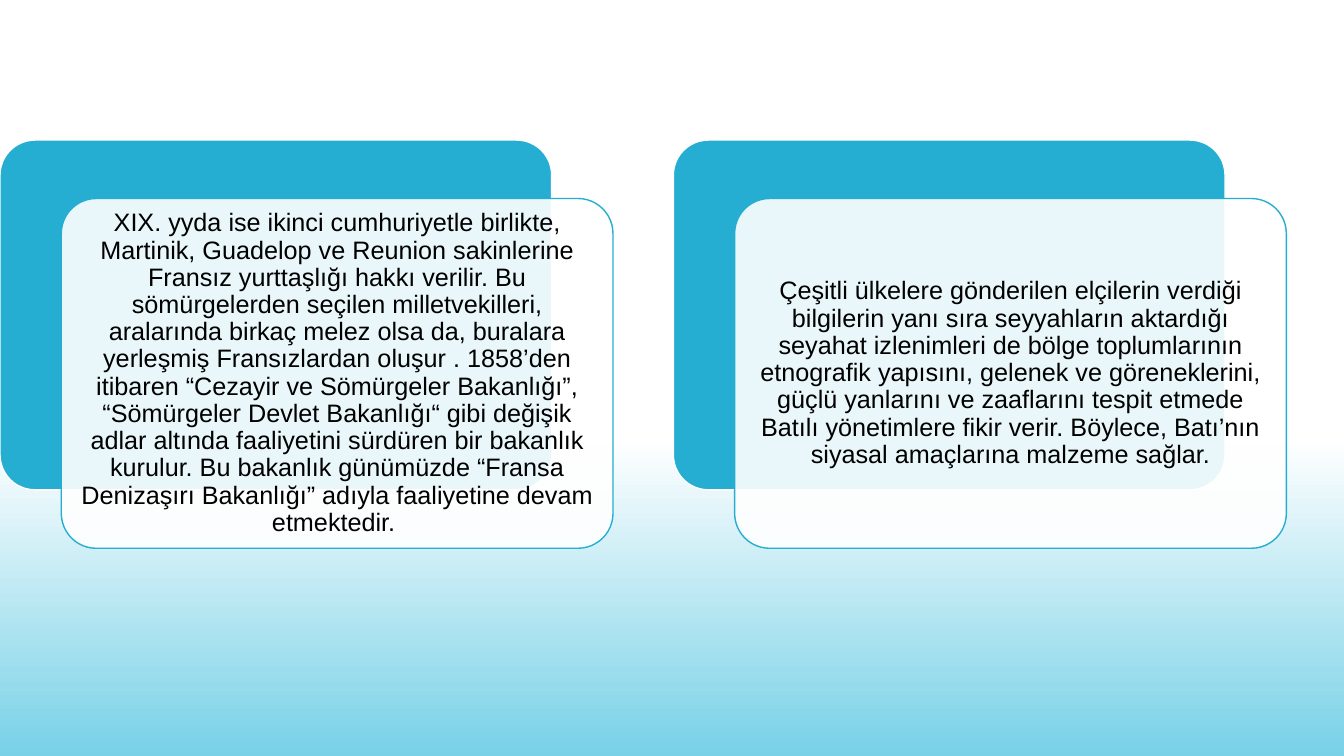
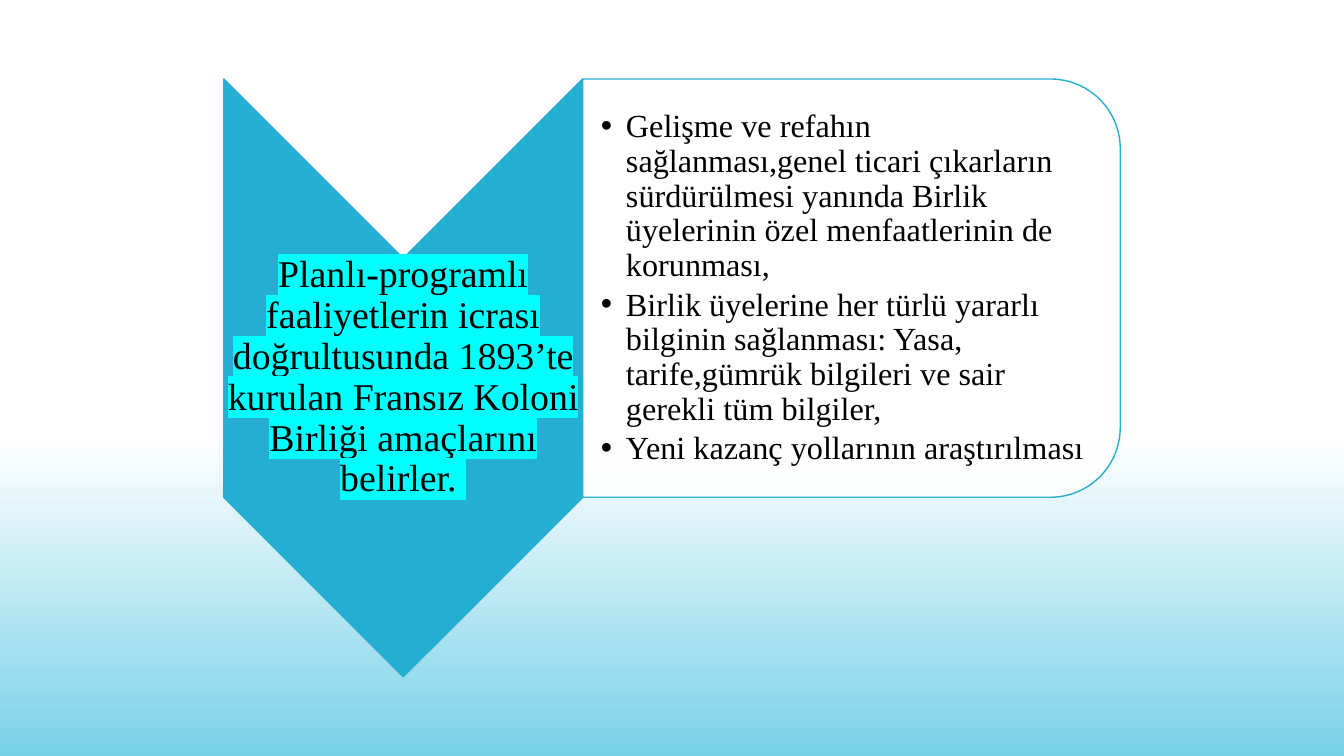
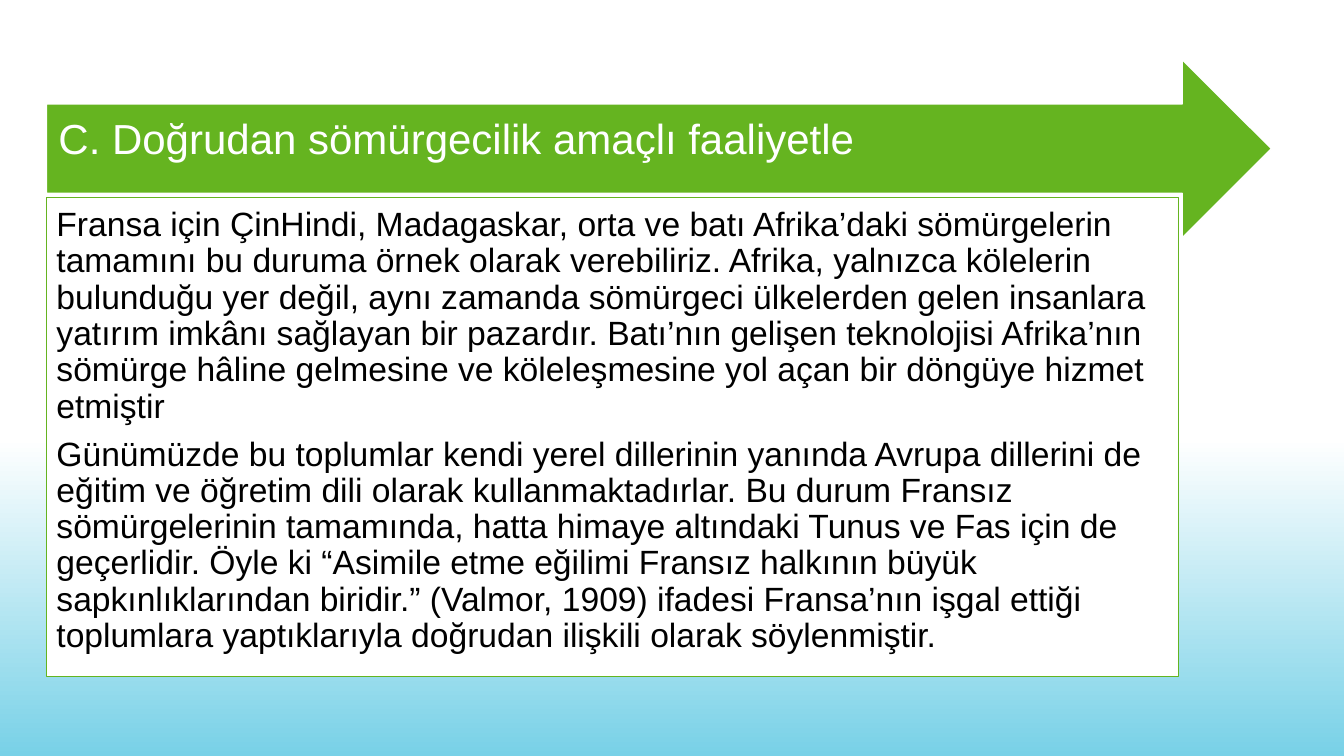
from lxml import etree
from pptx import Presentation
from pptx.dml.color import RGBColor
from pptx.enum.shapes import MSO_SHAPE
from pptx.enum.text import MSO_ANCHOR, MSO_AUTO_SIZE, PP_ALIGN
from pptx.oxml.ns import qn
from pptx.util import Inches, Pt

ROUNDED = MSO_SHAPE.ROUNDED_RECTANGLE
CHEVRON = MSO_SHAPE.CHEVRON
TWO_ROUNDED = MSO_SHAPE.ROUND_2_SAME_RECTANGLE
ARROW = MSO_SHAPE.RIGHT_ARROW
TOP, MIDDLE = MSO_ANCHOR.TOP, MSO_ANCHOR.MIDDLE
LEFT, CENTER = PP_ALIGN.LEFT, PP_ALIGN.CENTER
CONTENT, BLANK = 1, 6

SKY, BLUE, GREEN = "78D1E7", "25AED1", "65B420"
WHITE, BLACK, CYAN = "FFFFFF", "000000", "00FFFF"
SANS, SERIF = "Arial", "Times New Roman"

COLONIES = (
    "XIX. yyda ise ikinci cumhuriyetle birlikte, Martinik, Guadelop ve Reunion sakinlerine "
    "Fransız yurttaşlığı hakkı verilir. Bu sömürgelerden seçilen milletvekilleri, aralarında "
    "birkaç melez olsa da, buralara yerleşmiş Fransızlardan oluşur . 1858’den itibaren “Cezayir "
    "ve Sömürgeler Bakanlığı”, “Sömürgeler Devlet Bakanlığı“ gibi değişik adlar altında "
    "faaliyetini sürdüren bir bakanlık kurulur. Bu bakanlık günümüzde “Fransa Denizaşırı "
    "Bakanlığı” adıyla faaliyetine devam etmektedir. "
)
ENVOYS = (
    "Çeşitli ülkelere gönderilen elçilerin verdiği bilgilerin yanı sıra seyyahların aktardığı "
    "seyahat izlenimleri de bölge toplumlarının etnografik yapısını, gelenek ve göreneklerini, "
    "güçlü yanlarını ve zaaflarını tespit etmede Batılı yönetimlere fikir verir. Böylece, "
    "Batı’nın siyasal amaçlarına malzeme sağlar."
)
UNION = (
    "Planlı-programlı faaliyetlerin icrası doğrultusunda 1893’te kurulan Fransız Koloni Birliği "
    "amaçlarını belirler. "
)
AIMS = [
    "Gelişme ve refahın sağlanması,genel ticari çıkarların sürdürülmesi yanında Birlik "
    "üyelerinin özel menfaatlerinin de korunması,",
    "Birlik üyelerine her türlü yararlı bilginin sağlanması: Yasa, tarife,gümrük bilgileri ve "
    "sair gerekli tüm bilgiler,",
    "Yeni kazanç yollarının araştırılması",
]
DIRECT_RULE = [
    "Fransa için ÇinHindi, Madagaskar, orta ve batı Afrika’daki sömürgelerin tamamını bu duruma "
    "örnek olarak verebiliriz. Afrika, yalnızca kölelerin bulunduğu yer değil, aynı zamanda "
    "sömürgeci ülkelerden gelen insanlara yatırım imkânı sağlayan bir pazardır. Batı’nın gelişen "
    "teknolojisi Afrika’nın sömürge hâline gelmesine ve köleleşmesine yol açan bir döngüye "
    "hizmet etmiştir",
    "Günümüzde bu toplumlar kendi yerel dillerinin yanında Avrupa dillerini de eğitim ve öğretim "
    "dili olarak kullanmaktadırlar. Bu durum Fransız sömürgelerinin tamamında, hatta himaye "
    "altındaki Tunus ve Fas için de geçerlidir. Öyle ki “Asimile etme eğilimi Fransız halkının "
    "büyük sapkınlıklarından biridir.” (Valmor, 1909) ifadesi Fransa’nın işgal ettiği toplumlara "
    "yaptıklarıyla doğrudan ilişkili olarak söylenmiştir.",
]


def color(value):
    return RGBColor.from_string(value)


class Deck:
    """Holds the shared style and the current slide; boxes are percentages of the slide."""

    def __init__(self):
        self.prs = Presentation()
        self.prs.slide_width, self.prs.slide_height = Inches(13.33), Inches(7.5)
        self.slide = None
        fade = self.prs.slide_master.background.fill
        fade.gradient()
        fade.gradient_angle = 270
        for stop, position, tint in zip(fade.gradient_stops, (0.58, 1), (WHITE, SKY)):
            stop.position, stop.color.rgb = position, color(tint)

    def new_slide(self, layout):
        self.slide = self.prs.slides.add_slide(self.prs.slide_layouts[layout])

    def box(self, left, top, width, height):
        across, down = self.prs.slide_width / 100, self.prs.slide_height / 100
        return [int(n) for n in (left * across, top * down, width * across, height * down)]

    def paint(self, shape, fill, line, opacity=100):
        shape.fill.solid()
        shape.fill.fore_color.rgb = color(fill)
        if opacity < 100:
            tint = shape.element.spPr.find(qn("a:solidFill")).find(qn("a:srgbClr"))
            etree.SubElement(tint, qn("a:alpha"), val=str(opacity * 1000))
        shape.line.color.rgb = color(line)
        shape.line.width = Pt(1)

    def shape(self, kind, box, fill, line, opacity=100, turned=False, adjust=None):
        left, top, width, height = self.box(*box)
        if turned:
            left, top = left + (width - height) // 2, top + (height - width) // 2
            width, height = height, width
        shape = self.slide.shapes.add_shape(kind, left, top, width, height)
        shape.shadow.inherit = False
        shape.rotation = 90 if turned else 0
        if adjust is not None:
            shape.adjustments[0] = adjust
        self.paint(shape, fill, line, opacity)
        return shape

    def set_text(self, shape, texts, size, font, ink=BLACK, align=LEFT, anchor=MIDDLE,
                 insets=(0.02, 0.02, 0.02, 0.02), after=0.35, bullet=False, highlight=None):
        frame = shape.text_frame
        frame.word_wrap, frame.auto_size = True, MSO_AUTO_SIZE.NONE
        frame.vertical_anchor = anchor
        (frame.margin_left, frame.margin_top,
         frame.margin_right, frame.margin_bottom) = map(Inches, insets)
        frame.text = "\n".join(texts)
        indent = Inches(0.25) if bullet else 0
        for paragraph in frame.paragraphs:
            paragraph.alignment, paragraph.line_spacing = align, 0.9
            paragraph.space_before, paragraph.space_after = Pt(0), Pt(round(size * after, 1))
            paragraph.font.size, paragraph.font.name = Pt(size), font
            paragraph.font.color.rgb = color(ink)
            props = paragraph._p.get_or_add_pPr()
            props.set("marL", str(indent))
            props.set("indent", str(-indent))
            mark = etree.Element(qn("a:buChar"), char="•") if bullet else etree.Element(qn("a:buNone"))
            props.find(qn("a:defRPr")).addprevious(mark)
            if highlight:
                for run in paragraph.runs:
                    marker = etree.SubElement(run._r.get_or_add_rPr(), qn("a:highlight"))
                    etree.SubElement(marker, qn("a:srgbClr"), val=highlight)

    def placeholder(self, index, box, texts, size, font, **style):
        holder = self.slide.placeholders[index]
        holder.left, holder.top, holder.width, holder.height = self.box(*box)
        tree = holder.element.getparent()
        tree.append(holder.element)
        self.set_text(holder, texts, size, font, **style)
        return holder

    def title(self, box, text, size, font, **style):
        return self.placeholder(0, box, [text], size, font, **style)

    def body(self, box, texts, size, font, **style):
        return self.placeholder(1, box, texts, size, font, **style)

    def card(self, left, text):
        top, width, height = 18.53, 41.05, 46.27
        self.shape(ROUNDED, (left, top, width, height), BLUE, WHITE, adjust=0.1)
        front = self.shape(ROUNDED, (left + 4.56, top + 7.73, width, height),
                           WHITE, BLUE, opacity=90, adjust=0.1)
        self.set_text(front, [text], 18, SANS, align=CENTER, insets=[0.07] * 4)


def main():
    deck = Deck()

    deck.new_slide(BLANK)
    for column, text in enumerate((COLONIES, ENVOYS)):
        deck.card(column * 50.1, text)

    deck.new_slide(CONTENT)
    deck.shape(CHEVRON, (16.65, 10.45, 26.7, 79.07), BLUE, BLUE, turned=True)
    deck.title((16.65, 34.13, 26.7, 31.6), UNION, 27, SERIF, align=CENTER, highlight=CYAN)
    deck.shape(TWO_ROUNDED, (43.35, 10.45, 40, 55.33), WHITE, BLUE, opacity=90, turned=True)
    deck.body((43.35, 13.2, 38.5, 49.87), AIMS, 23, SERIF,
              insets=(0.18, 0.02, 0.02, 0.02), after=0.15, bullet=True)

    deck.new_slide(CONTENT)
    deck.shape(ARROW, (3.45, 7.87, 91.15, 23.6), GREEN, WHITE)
    deck.title((3.45, 13.87, 87.85, 11.73), "C. Doğrudan sömürgecilik amaçlı faaliyetle",
               30, SANS, ink=WHITE, insets=(0.12, 0.12, 0.28, 0.28))
    account = deck.body((3.45, 26.13, 84.25, 63.33), DIRECT_RULE, 24, SANS,
                        anchor=TOP, insets=[0.1] * 4)
    deck.paint(account, WHITE, GREEN)

    deck.prs.save("out.pptx")


if __name__ == "__main__":
    main()
